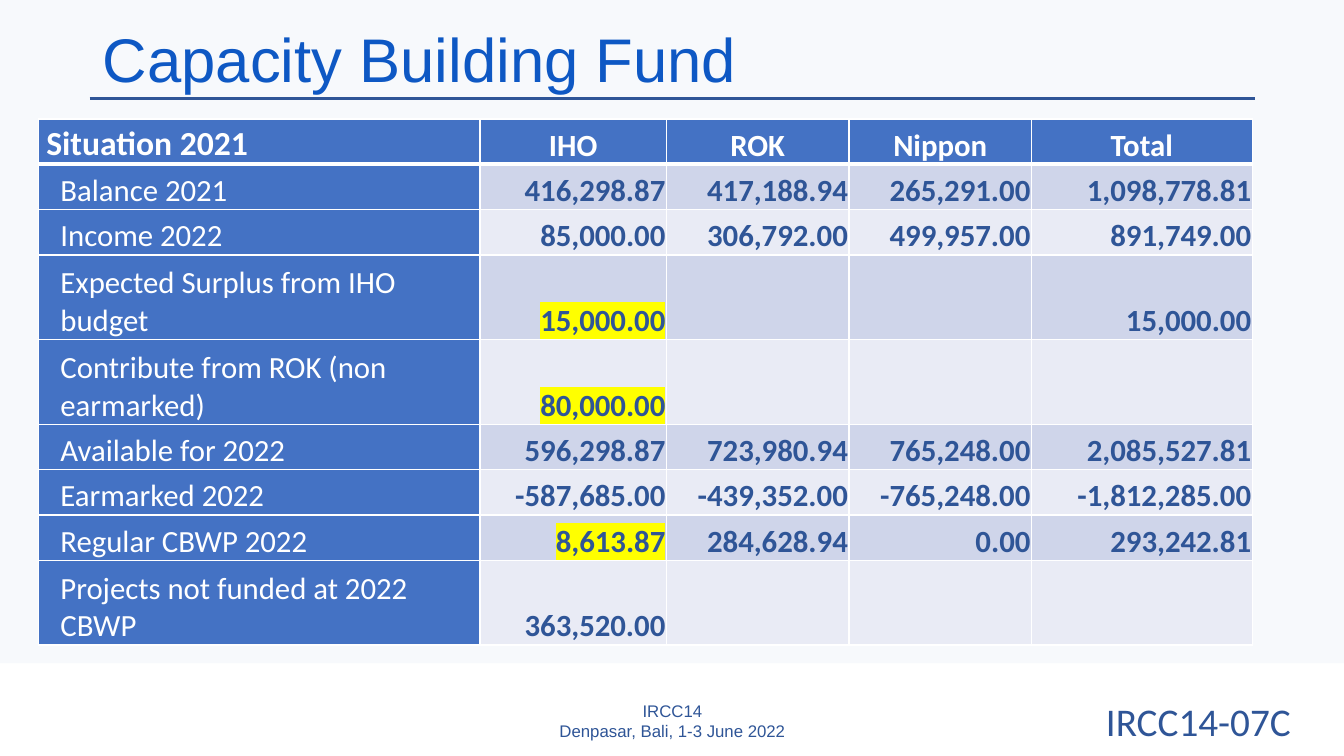
from dataclasses import dataclass

from lxml.etree import SubElement
from pptx import Presentation
from pptx.dml.color import RGBColor
from pptx.enum.shapes import MSO_CONNECTOR, MSO_SHAPE
from pptx.enum.text import MSO_ANCHOR, MSO_AUTO_SIZE, PP_ALIGN
from pptx.oxml.ns import qn
from pptx.slide import Slide
from pptx.table import _Cell
from pptx.text.text import TextFrame
from pptx.util import Inches, Pt


@dataclass(frozen=True)
class Theme:
    heading_font: str = "Arial"
    body_font: str = "Calibri"
    title_blue: str = "0E58C4"
    navy: str = "2F5597"
    label_blue: str = "4472C4"
    band_blue: str = "DAE3F3"
    odd_row: str = "CFD5EA"
    even_row: str = "E9EBF5"
    white: str = "FFFFFF"
    highlight: str = "FFFF00"
    title_size: int = 44
    code_size: int = 28
    corner_size: int = 24
    table_size: int = 22
    footer_size: int = 12


@dataclass(frozen=True)
class FundRow:
    label: str
    amounts: tuple[str, ...]
    highlighted: bool = False


@dataclass(frozen=True)
class Caption:
    text: str
    box: tuple[float, float, float, float]
    font: str
    size: int
    anchor: MSO_ANCHOR
    fit: MSO_AUTO_SIZE


THEME = Theme()
FUNDS = ("IHO", "ROK", "Nippon", "Total")
COLUMN_WIDTHS = (4.38, 1.85, 1.81, 1.81, 2.19)
SINGLE_ROW, DOUBLE_ROW = 0.45, 0.84
FUND_ROWS = (
    FundRow("Balance 2021", ("416,298.87", "417,188.94", "265,291.00", "1,098,778.81")),
    FundRow("Income 2022", ("85,000.00", "306,792.00", "499,957.00", "891,749.00")),
    FundRow("Expected Surplus from IHO\nbudget", ("15,000.00", "", "", "15,000.00"), True),
    FundRow("Contribute from ROK (non\nearmarked)", ("80,000.00", "", "", ""), True),
    FundRow("Available for 2022", ("596,298.87", "723,980.94", "765,248.00", "2,085,527.81")),
    FundRow("Earmarked 2022", ("-587,685.00", "-439,352.00", "-765,248.00", "-1,812,285.00")),
    FundRow("Regular CBWP 2022", ("8,613.87", "284,628.94", "0.00", "293,242.81"), True),
    FundRow("Projects not funded at 2022\nCBWP", ("363,520.00", "", "", "")),
)
CAPTIONS = (
    Caption("IRCC14\vDenpasar, Bali, 1-3 June 2022", (4.42, 6.95, 4.5, 0.4),
            THEME.heading_font, THEME.footer_size, MSO_ANCHOR.MIDDLE, MSO_AUTO_SIZE.NONE),
    Caption("IRCC14-07C", (10.47, 6.87, 2.83, 0.57),
            THEME.body_font, THEME.code_size, MSO_ANCHOR.TOP, MSO_AUTO_SIZE.SHAPE_TO_FIT_TEXT),
)


def format_text(frame: TextFrame, font: str, size: int, color: str,
                align: PP_ALIGN, bold: bool = False) -> None:
    for paragraph in frame.paragraphs:
        paragraph.alignment = align
        for run in paragraph.runs:
            run.font.name = font
            run.font.size = Pt(size)
            run.font.bold = bold
            run.font.color.rgb = RGBColor.from_string(color)


def add_band(slide: Slide) -> None:
    """Draw the translucent background band behind everything else."""
    band = slide.shapes.add_shape(MSO_SHAPE.RECTANGLE, 0, 0, Inches(13.33), Inches(6.58))
    band.shadow.inherit = False
    band.line.fill.background()
    band.fill.solid()
    band.fill.fore_color.rgb = RGBColor.from_string(THEME.band_blue)
    color = band._element.spPr.find(qn("a:solidFill"))[0]
    SubElement(color, qn("a:alpha"), val="21000")
    slide.shapes._spTree.insert(2, band._element)


def add_title_rule(slide: Slide) -> None:
    rule = slide.shapes.add_connector(
        MSO_CONNECTOR.STRAIGHT, Inches(0.89), Inches(0.98), Inches(12.45), Inches(0.98))
    rule.line.color.rgb = RGBColor.from_string(THEME.navy)
    rule.line.width = Pt(2.25)
    SubElement(rule._element.spPr, qn("a:effectLst"))


def add_caption(slide: Slide, caption: Caption) -> None:
    frame = slide.shapes.add_textbox(*map(Inches, caption.box)).text_frame
    frame.word_wrap = True
    frame.auto_size = caption.fit
    frame.vertical_anchor = caption.anchor
    frame.text = caption.text
    format_text(frame, caption.font, caption.size, THEME.navy, PP_ALIGN.CENTER)


def set_title(slide: Slide, text: str) -> None:
    title = slide.shapes.title
    title.left, title.top, title.width, title.height = map(Inches, (0.92, -0.1, 11.5, 1.45))
    frame = title.text_frame
    frame.text = text
    frame.auto_size = MSO_AUTO_SIZE.NONE
    frame.vertical_anchor = MSO_ANCHOR.MIDDLE
    frame.paragraphs[0].line_spacing = 0.9
    format_text(frame, THEME.heading_font, THEME.title_size, THEME.title_blue, PP_ALIGN.LEFT)


def set_borders(cell: _Cell, top: float, bottom: float) -> None:
    properties = cell._tc.get_or_add_tcPr()
    for side, width in (("L", 1), ("R", 1), ("T", top), ("B", bottom)):
        border = SubElement(properties, qn(f"a:ln{side}"), w=str(Pt(width)))
        fill = SubElement(border, qn("a:solidFill"))
        SubElement(fill, qn("a:srgbClr"), val=THEME.white)


def fill_cell(cell: _Cell, text: str, fill: str, color: str, align: PP_ALIGN, bold: bool,
              size: int = THEME.table_size, indent: float = 0.01,
              top: float = 1, bottom: float = 1) -> None:
    set_borders(cell, top, bottom)
    cell.fill.solid()
    cell.fill.fore_color.rgb = RGBColor.from_string(fill)
    cell.vertical_anchor = MSO_ANCHOR.BOTTOM
    cell.margin_left = Inches(indent)
    cell.margin_right = cell.margin_top = Inches(0.01)
    cell.margin_bottom = 0
    if text:
        cell.text_frame.text = text
        format_text(cell.text_frame, THEME.body_font, size, color, align, bold)


def highlight_text(cell: _Cell) -> None:
    for run in cell.text_frame.paragraphs[0].runs:
        properties = run._r.get_or_add_rPr()
        highlight = SubElement(properties, qn("a:highlight"))
        SubElement(highlight, qn("a:srgbClr"), val=THEME.highlight)
        properties.find(qn("a:solidFill")).addnext(highlight)


def add_fund_table(slide: Slide) -> None:
    heights = [SINGLE_ROW] + [DOUBLE_ROW if "\n" in row.label else SINGLE_ROW
                              for row in FUND_ROWS]
    table = slide.shapes.add_table(
        len(heights), len(COLUMN_WIDTHS), Inches(0.38), Inches(1.18),
        Inches(sum(COLUMN_WIDTHS)), Inches(sum(heights))).table
    for column, width in zip(table.columns, COLUMN_WIDTHS):
        column.width = Inches(width)
    for table_row, height in zip(table.rows, heights):
        table_row.height = Inches(height)

    fill_cell(table.cell(0, 0), "Situation 2021", THEME.label_blue, THEME.white,
              PP_ALIGN.LEFT, True, size=THEME.corner_size, indent=0.08, bottom=3)
    for column, fund in enumerate(FUNDS, start=1):
        fill_cell(table.cell(0, column), fund, THEME.label_blue, THEME.white,
                  PP_ALIGN.CENTER, True, bottom=3)
    for index, row in enumerate(FUND_ROWS, start=1):
        top = 3 if index == 1 else 1
        shade = THEME.odd_row if index % 2 else THEME.even_row
        fill_cell(table.cell(index, 0), row.label, THEME.label_blue, THEME.white,
                  PP_ALIGN.LEFT, False, indent=0.22, top=top)
        for column, amount in enumerate(row.amounts, start=1):
            fill_cell(table.cell(index, column), amount, shade, THEME.navy,
                      PP_ALIGN.RIGHT, True, top=top)
        if row.highlighted:
            highlight_text(table.cell(index, 1))


def main() -> None:
    presentation = Presentation()
    presentation.slide_width = Inches(13.33)
    presentation.slide_height = Inches(7.5)
    slide = presentation.slides.add_slide(presentation.slide_layouts[5])
    add_band(slide)
    add_title_rule(slide)
    for caption in CAPTIONS:
        add_caption(slide, caption)
    set_title(slide, "Capacity Building Fund")
    add_fund_table(slide)
    presentation.save("out.pptx")


if __name__ == "__main__":
    main()
